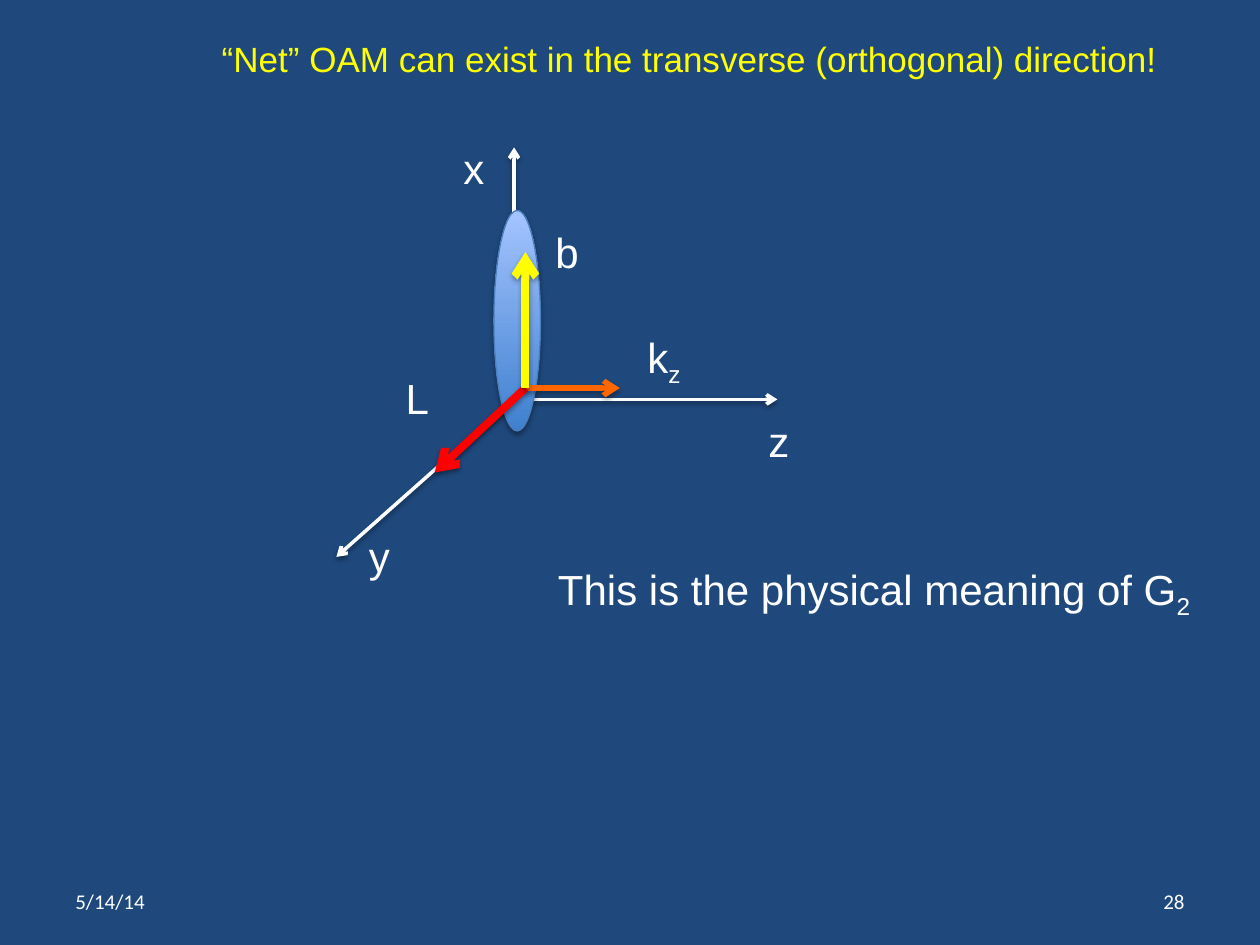
from dataclasses import dataclass

from lxml.etree import SubElement
from pptx import Presentation
from pptx.dml.color import RGBColor
from pptx.enum.shapes import MSO_CONNECTOR, MSO_SHAPE
from pptx.enum.text import MSO_ANCHOR, MSO_AUTO_SIZE, PP_ALIGN
from pptx.oxml.ns import qn
from pptx.util import Inches, Pt


@dataclass(frozen=True)
class Theme:
    """Colours, fonts and type sizes of the slide."""
    background: str = "1F497D"
    text: str = "FFFFFF"
    title: str = "FFFF00"
    oam: str = "FF0000"
    impact: str = "FFFF00"
    momentum: str = "FF6600"
    disc_low: str = "3F80CE"
    disc_high: str = "A4C4FF"
    disc_line: str = "4B7EBC"
    body_font: str = "Arial"
    footer_font: str = "Calibri"
    title_size: int = 20
    body_size: int = 24
    footer_size: int = 12


THEME = Theme()


def rgb(value):
    """Turn a hex string into a colour."""
    return RGBColor.from_string(value)


def apply(target, values):
    """Set attributes of an object from a dict."""
    for name, value in values.items():
        setattr(target, name, value)


def write(tf, text, subscript="", size=THEME.body_size, color=THEME.text,
          font=THEME.body_font, align=PP_ALIGN.LEFT):
    """Write one paragraph with an optional subscript."""
    p = tf.paragraphs[0]
    p.alignment = align
    for part, baseline in ((text, None), (subscript, "-25000")):
        if part:
            r = p.add_run()
            r.text = part
            apply(r.font, {"size": Pt(size), "name": font})
            r.font.color.rgb = rgb(color)
            if baseline:
                r._r.get_or_add_rPr().set("baseline", baseline)


def add_text(s, box, text, subscript="", wrap=False, anchor=MSO_ANCHOR.TOP, **style):
    """Add a text box that wraps in its box or grows with its text."""
    tf = s.shapes.add_textbox(*map(Inches, box)).text_frame
    fit = MSO_AUTO_SIZE.NONE if wrap else MSO_AUTO_SIZE.SHAPE_TO_FIT_TEXT
    apply(tf, {"word_wrap": wrap, "auto_size": fit, "vertical_anchor": anchor})
    write(tf, text, subscript, **style)


def add_shadow(sp, alpha, distance):
    """Give a shape a soft black shadow that falls downwards."""
    effects = SubElement(sp._element.spPr, qn("a:effectLst"))
    shadow = SubElement(effects, qn("a:outerShdw"), blurRad=str(Pt(3.1)),
                        dist=str(Pt(distance)), dir="5400000", rotWithShape="0")
    color = SubElement(shadow, qn("a:srgbClr"), val="000000")
    SubElement(color, qn("a:alpha"), val=str(alpha * 1000))


def add_arrow(s, start, end, color, width):
    """Draw a shadowed arrow between two points."""
    line = s.shapes.add_connector(MSO_CONNECTOR.STRAIGHT, *map(Inches, (*start, *end)))
    line.line.width = Pt(width)
    line.line.color.rgb = rgb(color)
    SubElement(line.line._get_or_add_ln(), qn("a:tailEnd"), type="arrow")
    add_shadow(line, 38, 1.6)


def add_disc(s, box):
    """Draw the shaded disc."""
    sp = s.shapes.add_shape(MSO_SHAPE.OVAL, *map(Inches, box))
    sp.fill.gradient()
    sp.fill.gradient_angle = 90
    for stop, color in zip(sp.fill.gradient_stops, (THEME.disc_low, THEME.disc_high)):
        stop.color.rgb = rgb(color)
    sp.line.width = Pt(0.75)
    sp.line.color.rgb = rgb(THEME.disc_line)
    add_shadow(sp, 35, 1.8)


def add_title(s, box):
    """Place and format the title placeholder."""
    title = s.shapes.title
    apply(title, dict(zip(("left", "top", "width", "height"), map(Inches, box))))
    apply(title.text_frame, {"word_wrap": True, "vertical_anchor": MSO_ANCHOR.TOP})
    write(title.text_frame, "“Net” OAM can exist in the transverse (orthogonal) direction!",
          size=THEME.title_size, color=THEME.title)


def add_diagram(s, box):
    """Draw the axes, the disc, the vectors and their labels in a box."""
    left, top, width, height = box

    def at(x, y):
        return left + x, top + y

    origin, center = at(1.41, 2), at(1.5, 1.91)
    for end in (at(0, height), at(1.41, 0), at(width, 2)):
        add_arrow(s, origin, end, THEME.text, 2)
    add_disc(s, (*at(1.25, 0.5), 0.37, 1.75))
    for end, color, weight in (
        (at(2.25, 1.91), THEME.momentum, 3),
        (at(0.78, 2.58), THEME.oam, 4.5),
        (at(1.5, 0.83), THEME.impact, 4.5),
    ):
        add_arrow(s, center, end, color, weight)
    for x, y, label_width, text, subscript in (
        (2.37, 1.41, 0.48, "k", "z"),
        (3.33, 2.08, 0.37, "z", ""),
        (0.16, 2.99, 0.37, "y", ""),
        (0.91, -0.09, 0.37, "x", ""),
        (0.45, 1.74, 0.38, "L", ""),
        (1.64, 0.58, 0.39, "b", ""),
    ):
        add_text(s, (*at(x, y), label_width, 0.5), text, subscript)


def add_footer(s, box):
    """Add the date on the left and the slide number on the right."""
    left, top, width, height = box
    part = 2.33
    for x, text, align in (
        (left, "5/14/14", PP_ALIGN.LEFT),
        (left + width - part, "28", PP_ALIGN.RIGHT),
    ):
        add_text(s, (x, top, part, height), text, wrap=True, anchor=MSO_ANCHOR.MIDDLE,
                 size=THEME.footer_size, font=THEME.footer_font, align=align)


def main():
    """Build and save the slide."""
    prs = Presentation()
    apply(prs, {"slide_width": Inches(10), "slide_height": Inches(7.5)})
    s = prs.slides.add_slide(prs.slide_layouts.get_by_name("Title Only"))
    s.background.fill.solid()
    s.background.fill.fore_color.rgb = rgb(THEME.background)
    add_title(s, (1.66, 0.25, 7.84, 0.44))
    add_diagram(s, (2.67, 1.17, 3.5, 3.25))
    add_text(s, (4.33, 4.42, 5.28, 0.5), "This is the physical meaning of G", "2")
    add_footer(s, (0.5, 6.95, 9, 0.4))
    prs.save("out.pptx")


if __name__ == "__main__":
    main()
